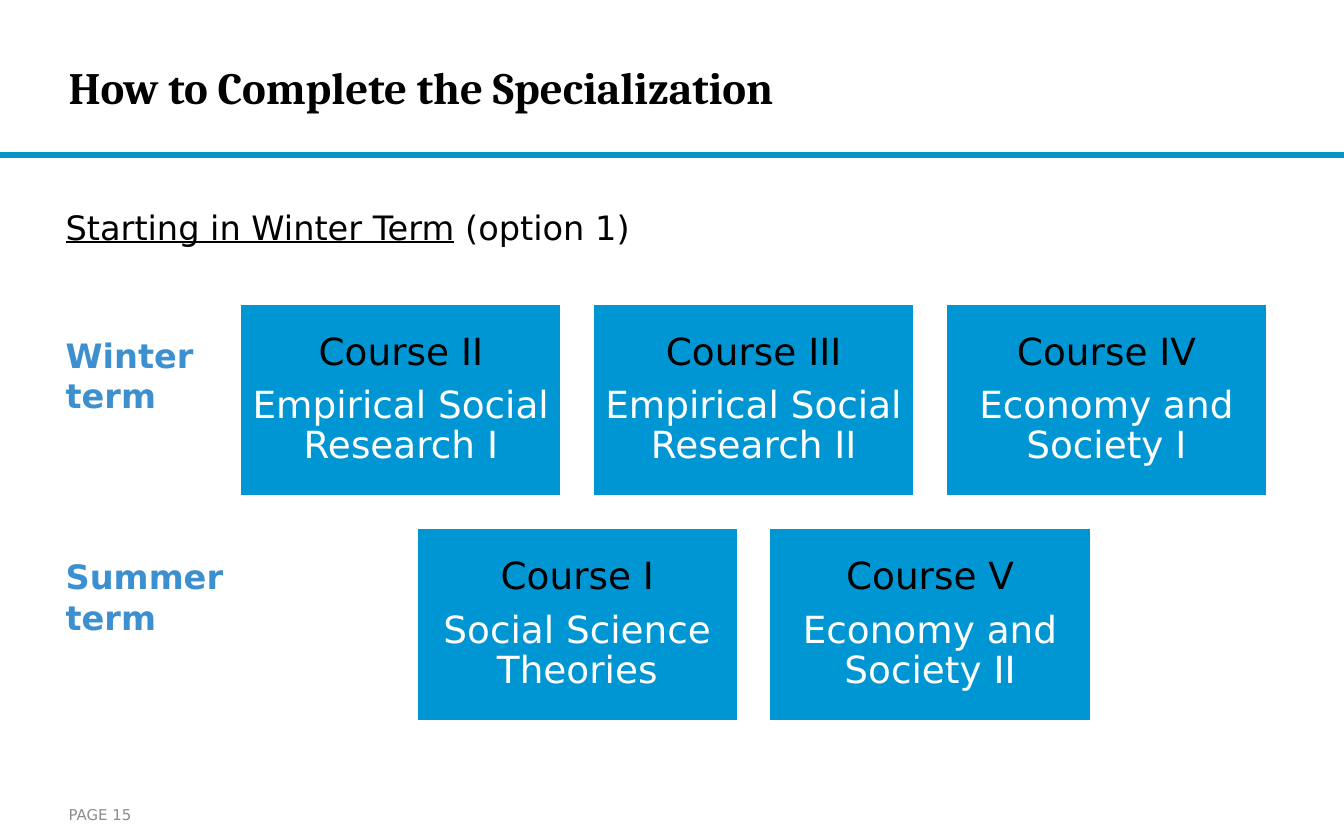
from pptx import Presentation
from pptx.dml.color import RGBColor
from pptx.enum import shapes, text
from pptx.util import Pt

COLORS = {
    "black": "000000", "white": "FFFFFF", "course": "0096D3",
    "rule": "0C94B7", "term": "3C90D0", "page": "8C8C8C",
}
BODY_FONT = "DejaVu Sans"
COURSE_WIDTH, COURSE_HEIGHT, COURSE_PITCH = 172, 103, 189
TERMS = [
    # name, label top, courses left, courses top, courses
    ("Winter term", 175.7, 128.8, 162.7, [
        ("Course II", "Empirical Social Research I"),
        ("Course III", "Empirical Social Research II"),
        ("Course IV", "Economy and Society I"),
    ]),
    ("Summer term", 294.5, 128.8 + COURSE_PITCH / 2, 283, [
        ("Course I", "Social Science Theories"),
        ("Course V", "Economy and Society II"),
    ]),
]


def add_run(paragraph, words, color, **font_format):
    run = paragraph.add_run()
    run.text = words
    run.font.color.rgb = RGBColor.from_string(COLORS[color])
    for key, value in ({"name": BODY_FONT} | font_format).items():
        setattr(run.font, key, value)


def add_block(left, top, width, height, fill, line):
    """Add a plain rectangle with a one-point outline."""
    block = slide.shapes.add_shape(
        shapes.MSO_SHAPE.RECTANGLE, Pt(left), Pt(top), Pt(width), Pt(height))
    block.shadow.inherit = False
    block.fill.solid()
    block.fill.fore_color.rgb = RGBColor.from_string(COLORS[fill])
    block.line.color.rgb = RGBColor.from_string(COLORS[line])
    block.line.width = Pt(1)
    return block.text_frame


prs = Presentation()
prs.slide_width, prs.slide_height = Pt(720), Pt(450)
slide = prs.slides.add_slide(prs.slide_layouts[5])

add_block(0, 82, 720, 2.2, "rule", "course")

title = slide.shapes.title
title.left, title.top, title.width, title.height = Pt(36.7), Pt(10.8), Pt(538.6), Pt(71.3)
title_format = {
    "margin_left": 0, "margin_right": 0, "margin_top": 0, "margin_bottom": 0,
    "vertical_anchor": text.MSO_ANCHOR.MIDDLE, "word_wrap": True,
    "auto_size": text.MSO_AUTO_SIZE.NONE,
}
for key, value in title_format.items():
    setattr(title.text_frame, key, value)
heading = title.text_frame.paragraphs[0]
heading.alignment = text.PP_ALIGN.LEFT
add_run(heading, "How to Complete the Specialization", "black",
        name="Cambria", size=Pt(24), bold=True)

start = slide.shapes.add_textbox(Pt(28.1), Pt(107.3), Pt(650), Pt(29)).text_frame
start.word_wrap = True
add_run(start.paragraphs[0], "Starting in Winter Term", "black", size=Pt(18), underline=True)
add_run(start.paragraphs[0], " (option 1)", "black", size=Pt(18))

course_format = {
    "margin_left": Pt(6), "margin_right": Pt(6), "margin_top": Pt(6), "margin_bottom": Pt(6),
    "vertical_anchor": text.MSO_ANCHOR.MIDDLE, "word_wrap": True,
}
line_format = {
    "alignment": text.PP_ALIGN.CENTER, "line_spacing": 0.9, "space_after": Pt(7),
}
for term, label_top, left, top, courses in TERMS:
    label = slide.shapes.add_textbox(Pt(28.1), Pt(label_top), Pt(101), Pt(51)).text_frame
    label.word_wrap = True
    add_run(label.paragraphs[0], term, "term", size=Pt(18), bold=True)

    for column, (number, subject) in enumerate(courses):
        course = add_block(left + column * COURSE_PITCH, top,
                           COURSE_WIDTH, COURSE_HEIGHT, "course", "white")
        for key, value in course_format.items():
            setattr(course, key, value)
        lines = [course.paragraphs[0], course.add_paragraph()]
        for line, words, color in zip(lines, (number, subject), ("black", "white")):
            for key, value in line_format.items():
                setattr(line, key, value)
            add_run(line, words, color, size=Pt(20))

page = slide.shapes.add_textbox(Pt(36.7), Pt(426.2), Pt(70.6), Pt(20.2)).text_frame
page.margin_left = page.margin_right = 0
page.vertical_anchor = text.MSO_ANCHOR.MIDDLE
page.word_wrap = True
add_run(page.paragraphs[0], "PAGE 15", "page", size=Pt(8))

prs.save("out.pptx")
